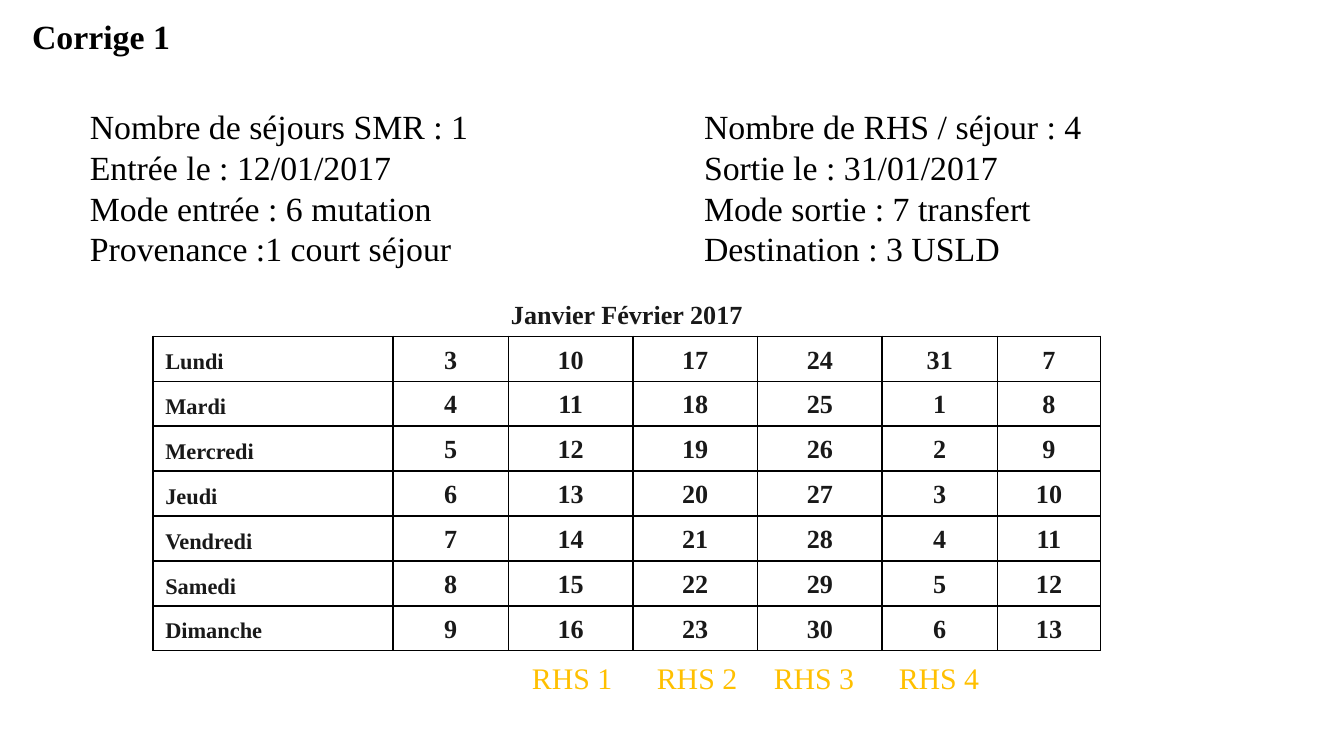
"""Build the answer slide: stay details, a calendar table and its weekly labels."""
from lxml.etree import SubElement
from pptx import Presentation
from pptx.dml.color import RGBColor
from pptx.enum.text import MSO_ANCHOR, MSO_AUTO_SIZE, PP_ALIGN
from pptx.oxml.ns import qn
from pptx.util import Inches, Pt

SLIDE_WIDTH = 10
SLIDE_HEIGHT = SLIDE_WIDTH * 9 / 16
FONT = "Times New Roman"
BLACK, INK, GOLD = "000000", "191919", "FFC000"
TITLE = "Corrige 1"
ENTRY = ["Nombre de séjours SMR : 1", "Entrée le : 12/01/2017",
         "Mode entrée : 6 mutation", "Provenance :1 court séjour"]
EXIT = ["Nombre de RHS / séjour : 4", "Sortie le : 31/01/2017",
        "Mode sortie : 7 transfert", "Destination : 3 USLD"]
CALENDAR_TITLE = "Janvier Février 2017"
DAYS = ["Lundi", "Mardi", "Mercredi", "Jeudi", "Vendredi", "Samedi", "Dimanche"]
FIRST_DATE, MONTH_LENGTH, WEEKS = 3, 31, 6
STAYS = ["RHS 1", "RHS 2", "RHS 3", "RHS 4"]
STAY_TABS = [0.93, 1.8, 2.73]
COLUMN_SHARES = [1.79, 0.86, 0.93, 0.93, 0.93, 0.86, 0.77]
TABLE_LEFT, TABLE_TOP, TABLE_WIDTH, TABLE_HEIGHT = 1.14, 2.17, 7.05, 2.65


def color(value):
    return RGBColor.from_string(value)


def add_text(paragraph, text, size, ink, bold=False):
    run = paragraph.add_run()
    run.text = text
    run.font.name, run.font.size, run.font.bold = FONT, Pt(size), bold
    run.font.color.rgb = color(ink)


def add_box(slide, place, lines, size, ink=BLACK, bold=False, wrap=True):
    frame = slide.shapes.add_textbox(*map(Inches, place)).text_frame
    frame.word_wrap = wrap
    frame.auto_size = MSO_AUTO_SIZE.SHAPE_TO_FIT_TEXT
    for index, line in enumerate(lines):
        paragraph = frame.add_paragraph() if index else frame.paragraphs[0]
        add_text(paragraph, line, size, ink, bold)
    return frame


def add_tabs(paragraph, positions):
    tabs = SubElement(paragraph._p.get_or_add_pPr(), qn("a:tabLst"))
    for position in positions:
        SubElement(tabs, qn("a:tab"), pos=str(Inches(position)), algn="l")


def add_borders(cell, sides):
    properties = cell._tc.get_or_add_tcPr()
    for index, side in enumerate(sides):
        line = properties.makeelement(qn(f"a:ln{side}"), {"w": str(Pt(1))})
        fill = SubElement(line, qn("a:solidFill"))
        SubElement(fill, qn("a:srgbClr"), val=BLACK)
        properties.insert(index, line)


def fill_cell(cell, text, size, alignment):
    cell.fill.background()
    cell.vertical_anchor = MSO_ANCHOR.BOTTOM
    cell.margin_left = cell.margin_right = Inches(0.09)
    cell.margin_top = cell.margin_bottom = Inches(0.05)
    paragraph = cell.text_frame.paragraphs[0]
    paragraph.alignment = alignment
    add_text(paragraph, text, size, INK, bold=True)


def add_calendar(slide):
    rows, columns = len(DAYS) + 1, WEEKS + 1
    place = (TABLE_LEFT, TABLE_TOP, TABLE_WIDTH, TABLE_HEIGHT)
    table = slide.shapes.add_table(rows, columns, *map(Inches, place)).table
    table.first_row = table.horz_banding = False
    for column, share in zip(table.columns, COLUMN_SHARES):
        column.width = Inches(TABLE_WIDTH * share / sum(COLUMN_SHARES))
    for row in table.rows:
        row.height = Inches(TABLE_HEIGHT / rows)
    title = table.cell(0, 0)
    title.merge(table.cell(0, WEEKS))
    fill_cell(title, CALENDAR_TITLE, 14, PP_ALIGN.CENTER)
    for column in range(columns):
        add_borders(table.cell(0, column), ["B"])
    for row, day in enumerate(DAYS):
        fill_cell(table.cell(row + 1, 0), day, 12, PP_ALIGN.LEFT)
        for week in range(WEEKS):
            date = (FIRST_DATE + row + 7 * week - 1) % MONTH_LENGTH + 1
            fill_cell(table.cell(row + 1, week + 1), str(date), 14, PP_ALIGN.CENTER)
        for column in range(columns):
            add_borders(table.cell(row + 1, column), "LRTB")


def main():
    presentation = Presentation()
    presentation.slide_width = Inches(SLIDE_WIDTH)
    presentation.slide_height = Inches(SLIDE_HEIGHT)
    slide = presentation.slides.add_slide(presentation.slide_layouts[6])
    add_box(slide, (0.57, 0.74, 3.36, 1.32), ENTRY, 18.1)
    add_box(slide, (5.14, 0.74, 3.1, 1.32), EXIT, 18.1, wrap=False)
    add_box(slide, (0.14, 0.07, 1.24, 0.41), [TITLE], 18.1, bold=True, wrap=False)
    add_calendar(slide)
    labels = add_box(slide, (3.86, 4.86, 3.97, 0.37), ["\t".join(STAYS)], 16, GOLD)
    add_tabs(labels.paragraphs[0], STAY_TABS)
    presentation.save("out.pptx")


if __name__ == "__main__":
    main()
